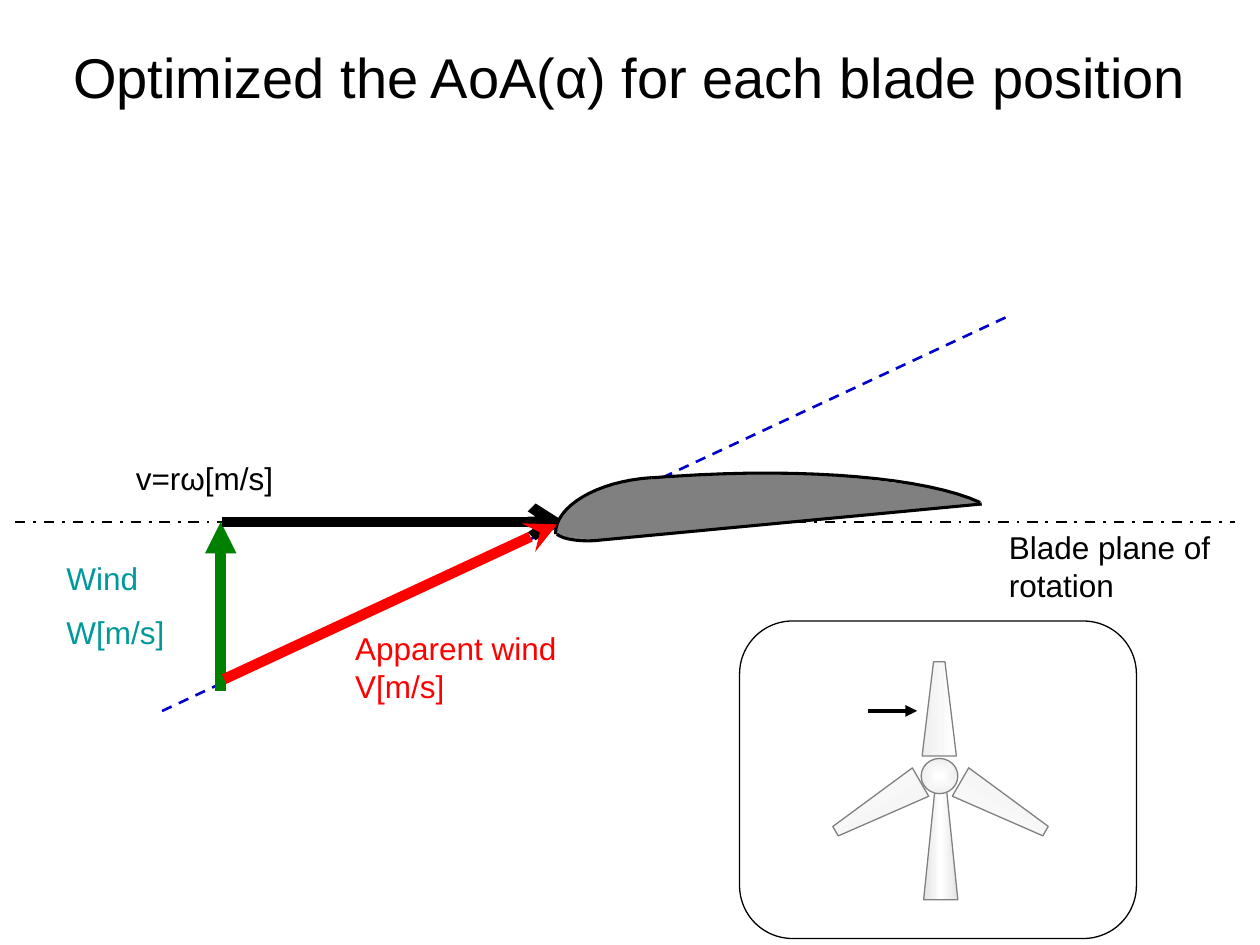
from lxml.etree import SubElement
from pptx import Presentation
from pptx.dml.color import RGBColor
from pptx.enum.dml import MSO_LINE
from pptx.enum.shapes import MSO_CONNECTOR, MSO_SHAPE
from pptx.enum.text import MSO_ANCHOR, MSO_AUTO_SIZE, PP_ALIGN
from pptx.oxml import parse_xml
from pptx.oxml.ns import nsdecls, qn
from pptx.util import Cm, Pt

COLORS = {
    "black": "000000", "white": "FFFFFF", "red": "FF0000", "green": "008000",
    "blue": "0000CC", "teal": "009999", "airfoil": "808080", "edge": "808080",
    "light": "EFEFEF", "shade": "E3E3E3",
}
BLADE_GRADIENT = [(0, "light"), (100, "white")]
TOWER_GRADIENT = [(0, "shade"), (50, "white"), (100, "shade")]
HUB_GRADIENT = [(0, "white"), (100, "light")]
LINEAR = '<a:lin ang="0" scaled="1"/>'
RADIAL = ('<a:path path="shape"><a:fillToRect l="50000" t="50000" '
          'r="50000" b="50000"/></a:path>')


def bezier(start, control_1, control_2, end, steps=16):
    points = []
    for step in range(steps + 1):
        t = step / steps
        u = 1 - t
        weights = (u ** 3, 3 * u * u * t, 3 * u * t * t, t ** 3)
        points.append(tuple(
            sum(w * p[axis] for w, p in zip(weights, (start, control_1, control_2, end)))
            for axis in (0, 1)))
    return points


class SlideBuilder:
    font = "Arial"
    label_size = 18

    def __init__(self, slide):
        self.slide = slide
        self.shapes = slide.shapes

    def color(self, name):
        return RGBColor.from_string(COLORS[name])

    def line(self, start, end, color, width, dash=None, arrow=None):
        connector = self.shapes.add_connector(
            MSO_CONNECTOR.STRAIGHT, *(Cm(value) for value in start + end))
        connector.line.color.rgb = self.color(color)
        connector.line.width = Pt(width)
        if dash:
            connector.line.dash_style = dash
        if arrow:
            side, kind = arrow
            SubElement(connector.line._get_or_add_ln(), qn(f"a:{side}End"), type=kind)
        SubElement(connector._element.spPr, qn("a:effectLst"))

    def paint(self, shape, fill=None, edge=None, width=0.75):
        shape.shadow.inherit = False
        if fill:
            shape.fill.solid()
            shape.fill.fore_color.rgb = self.color(fill)
        else:
            shape.fill.background()
        if edge:
            shape.line.color.rgb = self.color(edge)
            shape.line.width = Pt(width)
        else:
            shape.line.fill.background()

    def gradient(self, shape, stops, direction):
        shape.shadow.inherit = False
        shape.line.color.rgb = self.color("edge")
        shape.line.width = Pt(0.75)
        marks = "".join(
            f'<a:gs pos="{position * 1000}"><a:srgbClr val="{COLORS[name]}"/></a:gs>'
            for position, name in stops)
        shape._element.spPr.insert(2, parse_xml(
            f'<a:gradFill {nsdecls("a")} rotWithShape="1">'
            f'<a:gsLst>{marks}</a:gsLst>{direction}</a:gradFill>'))

    def outline(self, points, close):
        corners = [(Cm(x), Cm(y)) for x, y in points]
        builder = self.shapes.build_freeform(*corners[0])
        builder.add_line_segments(corners[1:], close=close)
        return builder.convert_to_shape()

    def freeform(self, points, close=False, **style):
        self.paint(self.outline(points, close), **style)

    def blade(self, left, top, width, height, stops, rotation=0):
        right, bottom = left + width, top + height
        blade = self.outline(
            [(left, bottom), (left + width / 3, top), (right - width / 3, top), (right, bottom)],
            True)
        self.gradient(blade, stops, LINEAR)
        blade.rotation = rotation

    def preset(self, kind, left, top, width, height):
        return self.shapes.add_shape(kind, Cm(left), Cm(top), Cm(width), Cm(height))

    def text(self, lines, left, top, width, height, color, size=label_size,
             space_before=9, align=PP_ALIGN.LEFT, anchor=MSO_ANCHOR.TOP, grow=True):
        box = self.shapes.add_textbox(Cm(left), Cm(top), Cm(width), Cm(height))
        frame = box.text_frame
        frame.word_wrap = True
        frame.auto_size = MSO_AUTO_SIZE.SHAPE_TO_FIT_TEXT if grow else MSO_AUTO_SIZE.NONE
        frame.vertical_anchor = anchor
        frame.text = "\n".join(lines)
        for paragraph in frame.paragraphs:
            paragraph.alignment = align
            paragraph.space_before = Pt(space_before)
            for run in paragraph.runs:
                run.font.name = self.font
                run.font.size = Pt(size)
                run.font.color.rgb = self.color(color)


def draw_airfoil(page):
    page.freeform(
        [(13.59, 10.74), (19.79, 10.16), (19.18, 9.93), (18.64, 9.8), (18.03, 9.73),
         (17.04, 9.6), (16.05, 9.55), (15.14, 9.55), (14.2, 9.58), (13.08, 9.65),
         (11.79, 10.34), (11.2, 10.77), (11.99, 10.9)],
        close=True, fill="airfoil")
    nose = bezier((13.13, 9.63), (12.04, 9.7), (11.18, 10.21), (11.2, 10.77))
    back = (bezier((13.13, 9.63), (13.28, 9.63), (13.44, 9.6), (13.59, 9.6), 4)
            + bezier((13.59, 9.6), (16.26, 9.42), (18.69, 9.63), (19.76, 10.13))[1:])
    belly = bezier((11.23, 10.77), (11.35, 10.87), (11.66, 10.92), (11.99, 10.9))
    page.freeform(nose, fill="airfoil", edge="black", width=1.75)
    page.freeform(back, edge="black", width=1.75)
    page.line((11.97, 10.9), (19.79, 10.16), "black", 1.75)
    page.freeform(belly, fill="airfoil", edge="black", width=1.75)


def draw_turbine(page):
    panel = page.preset(MSO_SHAPE.ROUNDED_RECTANGLE, 14.91, 12.52, 8, 6.4)
    page.paint(panel, fill="white", edge="black")
    page.blade(18.62, 15.9, 0.69, 2.24, TOWER_GRADIENT)
    hub = page.preset(MSO_SHAPE.OVAL, 18.57, 15.29, 0.74, 0.71)
    page.gradient(hub, HUB_GRADIENT, RADIAL)
    page.blade(18.59, 13.34, 0.69, 1.9, BLADE_GRADIENT)
    for left, rotation in ((19.89, 120), (17.37, 240)):
        page.blade(left, 15.27, 0.66, 1.98, BLADE_GRADIENT, rotation)
    page.line((17.5, 14.33), (18.49, 14.33), "black", 2.25, arrow=("tail", "triangle"))


def main():
    presentation = Presentation()
    presentation.slide_width, presentation.slide_height = Cm(25.4), Cm(19.05)
    page = SlideBuilder(presentation.slides.add_slide(presentation.slide_layouts[6]))

    page.line((20.27, 6.4), (3.23, 14.35), "blue", 1.5, dash=MSO_LINE.DASH)
    page.line((0.3, 10.52), (24.89, 10.52), "black", 1.5, dash=MSO_LINE.DASH_DOT)
    page.line((4.45, 13.92), (4.45, 10.52), "green", 6, arrow=("tail", "triangle"))
    page.line((4.47, 10.52), (11.38, 10.52), "black", 6, arrow=("tail", "arrow"))
    draw_airfoil(page)
    page.text(["Blade plane of rotation"], 20.09, 10.52, 5.79, 1.8, "black")
    page.text(["Wind", "W[m/s]"], 1.09, 11.15, 2.79, 2.16, "teal")
    page.text(["v=rω[m/s]"], 2.49, 9.12, 7.8, 1.02, "black")
    page.line((11.23, 10.57), (4.52, 13.69), "red", 6, arrow=("head", "stealth"))
    page.text(["Apparent wind", "V[m/s]"], 6.91, 12.55, 8.99, 1.8, "red", space_before=0)
    draw_turbine(page)
    page.text(["Optimized the AoA(α) for each blade position"], 0, -0.05, 25.4, 3.18, "black",
              size=32, space_before=0, align=PP_ALIGN.CENTER, anchor=MSO_ANCHOR.MIDDLE,
              grow=False)
    presentation.save("out.pptx")


if __name__ == "__main__":
    main()
